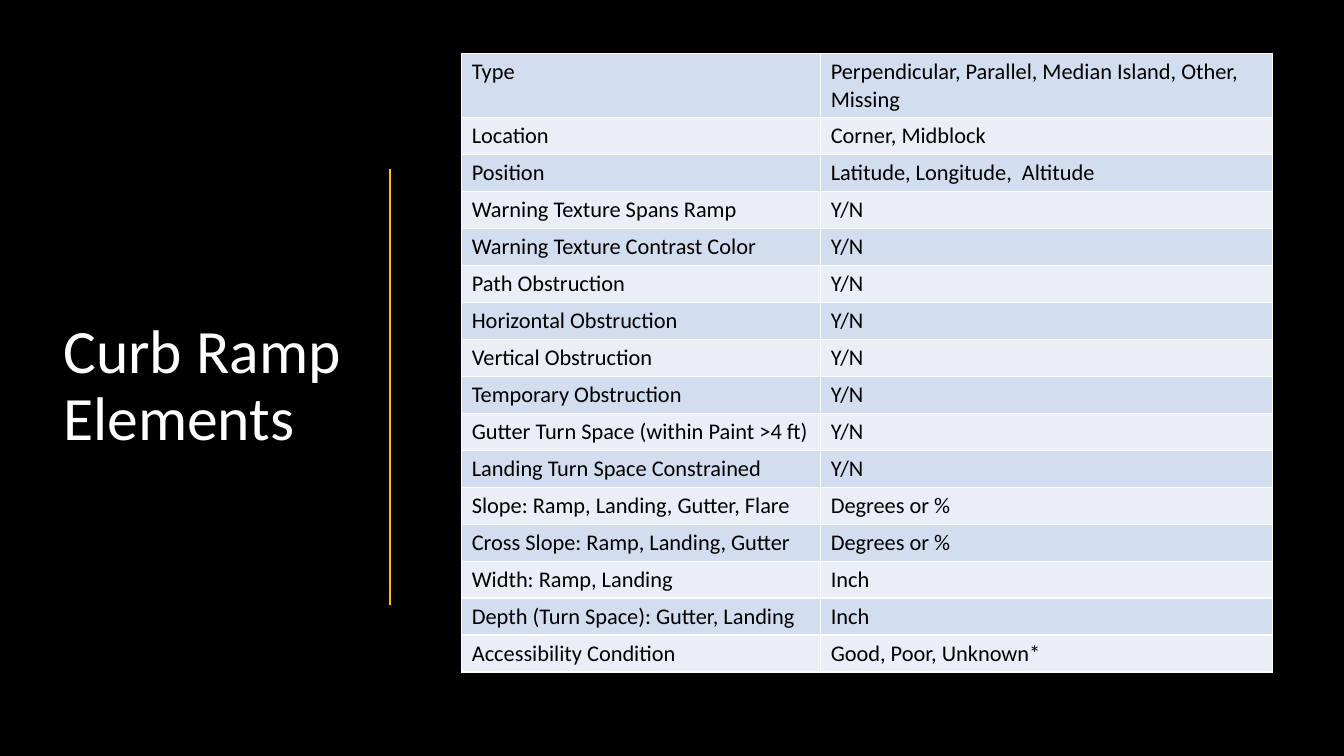
from lxml import etree
from pptx import Presentation
from pptx.dml.color import RGBColor
from pptx.enum.shapes import MSO_CONNECTOR
from pptx.enum.text import MSO_ANCHOR
from pptx.oxml import parse_xml
from pptx.oxml.ns import nsdecls, qn
from pptx.util import Inches, Pt

WHITE, BLACK, GOLD = "FFFFFF", "000000", "FFC000"
BANDS = ["D2DEEF", "EAEFF7"]
ELEMENTS = [
    ("Type", "Perpendicular, Parallel, Median Island, Other, Missing"),
    ("Location", "Corner, Midblock"),
    ("Position", "Latitude, Longitude,  Altitude"),
    ("Warning Texture Spans Ramp", "Y/N"),
    ("Warning Texture Contrast Color", "Y/N"),
    ("Path Obstruction", "Y/N"),
    ("Horizontal Obstruction", "Y/N"),
    ("Vertical Obstruction", "Y/N"),
    ("Temporary Obstruction", "Y/N"),
    ("Gutter Turn Space (within Paint >4 ft)", "Y/N"),
    ("Landing Turn Space Constrained", "Y/N"),
    ("Slope: Ramp, Landing, Gutter, Flare", "Degrees or %"),
    ("Cross Slope: Ramp, Landing, Gutter", "Degrees or %"),
    ("Width: Ramp, Landing", "Inch"),
    ("Depth (Turn Space): Gutter, Landing", "Inch"),
    ("Accessibility Condition", "Good, Poor, Unknown*"),
]
COLUMN_WIDTHS = [3.56, 4.48]
ROW_HEIGHT = 0.35


def paint(color_format, hex_color):
    color_format.rgb = RGBColor.from_string(hex_color)


def write(frame, text, size, color):
    frame.text = text
    para = frame.paragraphs[0]
    para.font.name = "Calibri"
    para.font.size = Pt(size)
    paint(para.font.color, color)
    return para


deck = Presentation()
deck.slide_width, deck.slide_height = Inches(13.33), Inches(7.5)
page = deck.slides.add_slide(deck.slide_layouts[6])
page.background.fill.solid()
paint(page.background.fill.fore_color, BLACK)

# Title and divider
title = page.shapes.add_textbox(Inches(0.53), Inches(2.43), Inches(3.69), Inches(2.82))
title.text_frame.word_wrap = True
title.text_frame.vertical_anchor = MSO_ANCHOR.MIDDLE
write(title.text_frame, "Curb Ramp Elements", 44, WHITE).line_spacing = 0.9

divider = page.shapes.add_connector(
    MSO_CONNECTOR.STRAIGHT, Inches(3.87), Inches(1.68), Inches(3.87), Inches(6))
divider.line.width = Pt(1)
paint(divider.line.color, GOLD)
etree.SubElement(divider._element.spPr, qn("a:effectLst"))

# Table of elements
table = page.shapes.add_table(
    len(ELEMENTS), len(COLUMN_WIDTHS), Inches(4.58), Inches(0.53),
    Inches(sum(COLUMN_WIDTHS)), Inches(ROW_HEIGHT * len(ELEMENTS))).table
table.first_row = False
for column, width in zip(table.columns, COLUMN_WIDTHS):
    column.width = Inches(width)

for row, texts in enumerate(ELEMENTS):
    table.rows[row].height = Inches(ROW_HEIGHT)
    for col, text in enumerate(texts):
        cell = table.cell(row, col)
        write(cell.text_frame, text, 16, BLACK)
        cell_props = cell._tc.get_or_add_tcPr()
        for side in "LRTB":
            cell_props.append(parse_xml(
                f'<a:ln{side} {nsdecls("a")} w="{Pt(1)}"><a:solidFill>'
                f'<a:srgbClr val="{WHITE}"/></a:solidFill></a:ln{side}>'))
        cell.fill.solid()
        paint(cell.fill.fore_color, BANDS[row % 2])

deck.save("out.pptx")
